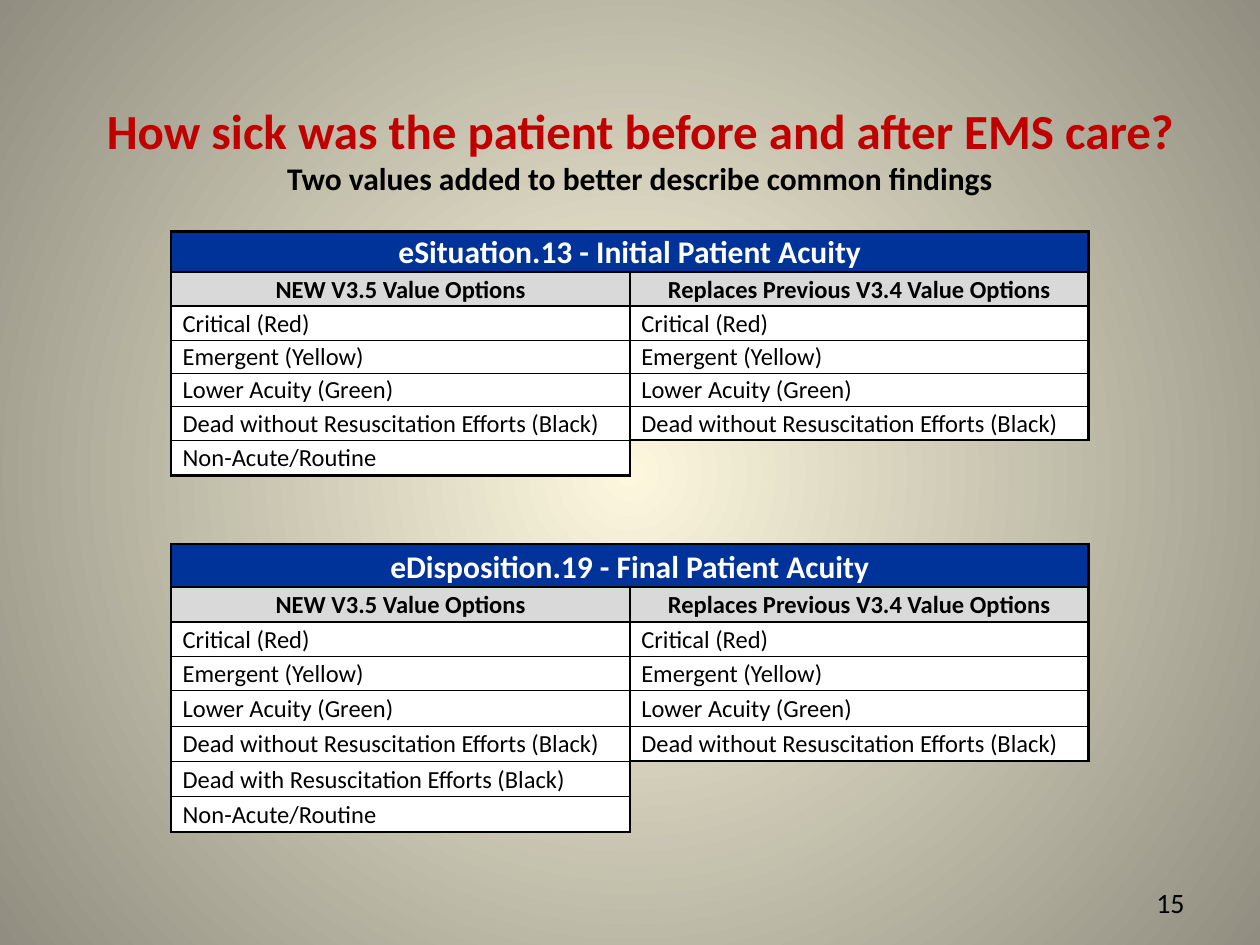
import collections
import lxml.etree
import pptx
import pptx.dml.color
import pptx.enum.text
import pptx.oxml.ns
import pptx.util

Box = collections.namedtuple("Box", "left top width height")
COLORS = {
    "black": "000000",
    "white": "FFFFFF",
    "red": "C00000",
    "blue": "003399",
    "gray": "D9D9D9",
    "center": "FCF7DD",
    "edge": "918E81",
}
FONT = "Calibri"
THICK, THIN = 1.5, 0.5
NO_STYLE = "{2D5ABB26-0587-4C30-8999-92F81FD0307C}"
ALIGN = pptx.enum.text.PP_ALIGN
ANCHOR = pptx.enum.text.MSO_ANCHOR
COLUMN_HEADS = ["NEW V3.5 Value Options", "Replaces Previous V3.4 Value Options"]
PREVIOUS = [
    "Critical (Red)",
    "Emergent (Yellow)",
    "Lower Acuity (Green)",
    "Dead without Resuscitation Efforts (Black)",
]
ROUTINE = "Non-Acute/Routine"
BLOCKS = [
    ("eSituation.13 - Initial Patient Acuity", PREVIOUS + [ROUTINE]),
    (
        "eDisposition.19 - Final Patient Acuity",
        PREVIOUS + ["Dead with Resuscitation Efforts (Black)", ROUTINE],
    ),
]
GAP_ROWS = 2
ROW_SHARES = [32, 27, 27, 26, 26, 27, 28, 27, 27, 34, 28, 27, 27, 28, 28, 28, 28]


def color(name):
    return pptx.dml.color.RGBColor.from_string(COLORS[name])


def add_element(parent, tag, **attributes):
    return lxml.etree.SubElement(parent, pptx.oxml.ns.qn(tag), attributes)


def scale_box(deck, left, top, width, height):
    return Box(
        int(left * deck.slide_width),
        int(top * deck.slide_height),
        int(width * deck.slide_width),
        int(height * deck.slide_height),
    )


def style_font(font, size, ink, bold=False):
    font.name = FONT
    font.size = pptx.util.Pt(size)
    font.bold = bold
    font.color.rgb = color(ink)


def paint_background(page):
    fill = page.background.fill
    fill.gradient()
    for stop, name in zip(fill.gradient_stops, ["center", "edge"]):
        stop.color.rgb = color(name)
    gradient = page.element.find(".//" + pptx.oxml.ns.qn("a:gradFill"))
    gradient.remove(gradient.find(pptx.oxml.ns.qn("a:lin")))
    path = add_element(gradient, "a:path", path="circle")
    add_element(path, "a:fillToRect", l="50000", t="50000", r="50000", b="50000")


def place_title(page, box):
    title = page.shapes.title
    title.left, title.top, title.width, title.height = box
    frame = title.text_frame
    frame.auto_size = pptx.enum.text.MSO_AUTO_SIZE.NONE
    frame.vertical_anchor = ANCHOR.MIDDLE
    para = frame.paragraphs[0]
    para.alignment = ALIGN.CENTER
    question = para.add_run()
    question.text = "How sick was the patient before and after EMS care?"
    style_font(question.font, 28, "red", True)
    para.add_line_break()
    summary = para.add_run()
    summary.text = "Two values added to better describe common findings"
    style_font(summary.font, 18, "black", True)


def place_page_number(page, box):
    frame = page.shapes.add_textbox(*box).text_frame
    frame.word_wrap = True
    frame.vertical_anchor = ANCHOR.MIDDLE
    para = frame.paragraphs[0]
    para.text = "15"
    para.alignment = ALIGN.RIGHT
    style_font(para.font, 16, "black")


def set_borders(cell, top, bottom):
    properties = cell._tc.get_or_add_tcPr()
    sides = [("a:lnL", THICK), ("a:lnR", THICK), ("a:lnT", top), ("a:lnB", bottom)]
    for position, (tag, weight) in enumerate(sides):
        line = add_element(properties, tag, w=str(pptx.util.Pt(weight)))
        properties.insert(position, line)
        add_element(add_element(line, "a:solidFill"), "a:srgbClr", val=COLORS["black"])


def fill_cell(cell, text, size, ink, paper, bold=True, align=ALIGN.CENTER,
              anchor=ANCHOR.MIDDLE, indent=0.01, top=THICK, bottom=THICK):
    cell.fill.solid()
    cell.fill.fore_color.rgb = color(paper)
    set_borders(cell, top, bottom)
    cell.vertical_anchor = anchor
    cell.margin_left = pptx.util.Inches(indent)
    cell.margin_top = cell.margin_right = pptx.util.Inches(0.01)
    cell.margin_bottom = 0
    para = cell.text_frame.paragraphs[0]
    para.text = text
    para.alignment = align
    style_font(para.font, size, ink, bold)


def clear_cell(cell):
    cell.fill.background()
    cell.margin_top = cell.margin_bottom = 0
    add_element(cell.text_frame.paragraphs[0]._p, "a:endParaRPr", sz="1400")


def fill_block(table, first, heading, current):
    table.cell(first, 0).merge(table.cell(first, 1))
    for column, text in enumerate([heading, ""]):
        fill_cell(table.cell(first, column), text, 18, "white", "blue", anchor=ANCHOR.BOTTOM)
    for column, values in enumerate([current, PREVIOUS]):
        fill_cell(table.cell(first + 1, column), COLUMN_HEADS[column], 14, "black", "gray")
        for index in range(len(current)):
            cell = table.cell(first + 2 + index, column)
            if index >= len(values):
                clear_cell(cell)
                continue
            fill_cell(
                cell, values[index], 14, "black", "white", bold=False,
                align=ALIGN.LEFT, indent=0.09,
                top=THICK if index == 0 else THIN,
                bottom=THICK if index == len(values) - 1 else THIN,
            )


def place_table(page, box):
    frame = page.shapes.add_table(len(ROW_SHARES), len(COLUMN_HEADS), *box)
    table = frame.table
    table.first_row = table.horz_banding = False
    table._tbl.tblPr.find(pptx.oxml.ns.qn("a:tableStyleId")).text = NO_STYLE
    for row, share in zip(table.rows, ROW_SHARES):
        row.height = int(box.height * share / sum(ROW_SHARES))
    first = 0
    for heading, current in BLOCKS:
        if first:
            for row in range(first - GAP_ROWS, first):
                for column in range(len(COLUMN_HEADS)):
                    clear_cell(table.cell(row, column))
        fill_block(table, first, heading, current)
        first += 2 + len(current) + GAP_ROWS


def main():
    deck = pptx.Presentation()
    deck.slide_width = pptx.util.Inches(10)
    deck.slide_height = pptx.util.Inches(7.5)
    page = deck.slides.add_slide(deck.slide_layouts[5])
    paint_background(page)
    place_page_number(page, scale_box(deck, 0.717, 0.93, 0.233, 0.05))
    place_title(page, scale_box(deck, 0.058, 0.116, 0.9, 0.083))
    place_table(page, scale_box(deck, 0.136, 0.245, 0.728, 0.636))
    deck.save("out.pptx")


if __name__ == "__main__":
    main()
